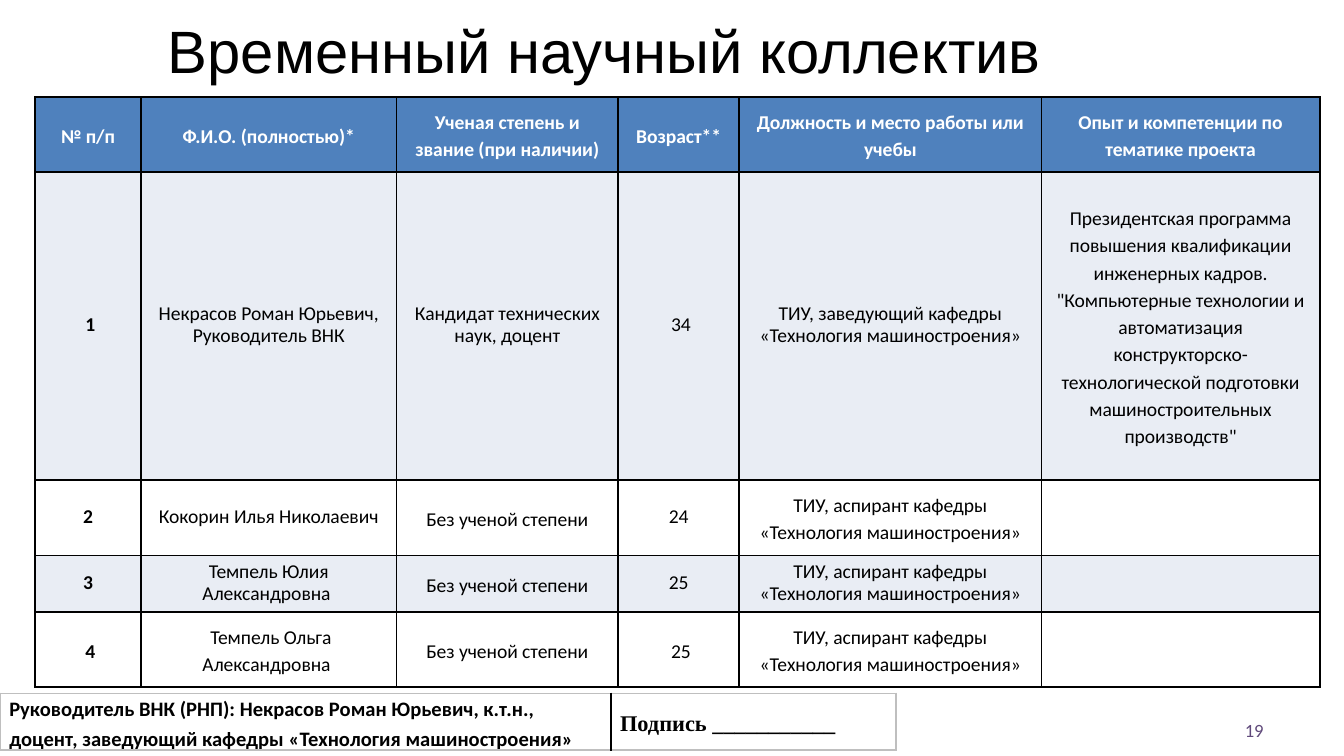
"""Builds a slide listing the members of a temporary research team."""
from copy import deepcopy

from lxml import etree
from pptx import Presentation, util as u
from pptx.dml import color
from pptx.enum import text
from pptx.oxml import ns

AL = text.PP_ALIGN
MID = text.MSO_ANCHOR.MIDDLE
TIGHT = u.Pt(11.8)
LOOSE = 1.15


def rgb(value):
    return color.RGBColor.from_string(value)


class Deck:
    def __init__(self, width, height):
        self.prs = Presentation()
        self.prs.slide_width, self.prs.slide_height = u.Pt(width), u.Pt(height)
        self.s = self.prs.slides.add_slide(self.prs.slide_layouts[6])
        self.base = dict(size=u.Pt(10.5), name="Calibri", bold=False)

    def put_text(self, tf, value, align=AL.CENTER, spacing=None, ink="000000", **fmt):
        p = tf.paragraphs[0]
        p.text = value
        p.alignment = align
        p.line_spacing = spacing
        for r in p.runs:
            for key, val in {**self.base, **fmt}.items():
                setattr(r.font, key, val)
            r.font.color.rgb = rgb(ink)
        for br in p._p.findall(ns.qn("a:br")):
            br.append(deepcopy(p.runs[0]._r.rPr))

    def label(self, box, value, **fmt):
        tf = self.s.shapes.add_textbox(*map(u.Pt, box)).text_frame
        tf.word_wrap = True
        tf.vertical_anchor = MID
        self.put_text(tf, value, **fmt)

    def border(self, cell, sides):
        pr = cell._tc.get_or_add_tcPr()
        for i, (side, ink) in enumerate(sides.items()):
            ln = etree.Element(ns.qn(f"a:ln{side}"), w=str(u.Pt(1)))
            fill = etree.SubElement(ln, ns.qn("a:solidFill"))
            etree.SubElement(fill, ns.qn("a:srgbClr"), val=ink)
            pr.insert(i, ln)

    def table(self, left, top, cols, rows):
        box = map(u.Pt, (left, top, sum(cols), sum(rows)))
        tbl = self.s.shapes.add_table(len(rows), len(cols), *box).table
        tbl.first_row = tbl.horz_banding = False
        for col, width in zip(tbl.columns, cols):
            col.width = u.Pt(width)
        for row, height in zip(tbl.rows, rows):
            row.height = u.Pt(height)
        return tbl

    def cell(self, cell, value, fill=None, sides=None, **fmt):
        cell.margin_left = cell.margin_right = u.Pt(5)
        cell.margin_top = cell.margin_bottom = 0
        cell.vertical_anchor = MID
        if fill:
            cell.fill.solid()
            cell.fill.fore_color.rgb = rgb(fill)
        else:
            cell.fill.background()
        self.border(cell, sides or dict.fromkeys("LRTB", "000000"))
        self.put_text(cell.text_frame, value, **fmt)


HEADER = ["№ п/п", "Ф.И.О. (полностью)*", "Ученая степень и звание (при наличии)",
          "Возраст**", "Должность и место работы или учебы",
          "Опыт и компетенции по тематике проекта"]
STUDENT = "ТИУ, аспирант кафедры «Технология машиностроения»"
NO_DEGREE = "Без ученой степени"
TEAM = [
    [" 1", "Некрасов Роман Юрьевич, Руководитель ВНК",
     "Кандидат технических наук, доцент", " 34",
     "ТИУ, заведующий кафедры «Технология машиностроения»",
     "Президентская программа повышения квалификации инженерных кадров.\n"
     "\"Компьютерные технологии и автоматизация конструкторско-технологической "
     "подготовки машиностроительных производств\""],
    ["2", "Кокорин Илья Николаевич", NO_DEGREE, "24", STUDENT, ""],
    ["3", "Темпель Юлия Александровна ", NO_DEGREE, "25", STUDENT, ""],
    [" 4", " Темпель Ольга Александровна ", NO_DEGREE, " 25", STUDENT, ""],
]
LOOSE_COLS = [{5}, {2, 4}, {2}, set(range(6))]


def main():
    d = Deck(720, 405)
    d.label((0, -7.2, 648, 67.7), "Временный научный коллектив",
            size=u.Pt(32), name="Arial")

    tbl = d.table(18.7, 52, [56.9, 136.8, 118.8, 64.8, 162, 149],
                  [40.3, 164.9, 40.5, 30.2, 40.3])
    for c, value in enumerate(HEADER):
        d.cell(tbl.cell(0, c), value, "4F81BD", spacing=LOOSE, ink="FFFFFF", bold=True)
    for r, (member, loose) in enumerate(zip(TEAM, LOOSE_COLS), 1):
        for c, value in enumerate(member):
            d.cell(tbl.cell(r, c), value, "E9EDF4" if r % 2 else "FFFFFF",
                   spacing=LOOSE if c in loose else TIGHT, bold=c == 0)

    sign = d.table(0, 371.5, [327.2, 152.8], [30])
    grey = dict.fromkeys("LRTB", "BFBFBF")
    d.cell(sign.cell(0, 0),
           "Руководитель ВНК (РНП): Некрасов Роман Юрьевич, к.т.н., доцент, "
           "заведующий кафедры «Технология машиностроения»",
           sides={**grey, "R": "000000"}, align=AL.LEFT, spacing=LOOSE,
           size=u.Pt(11), bold=True)
    d.cell(sign.cell(0, 1), "Подпись ___________", sides={**grey, "L": "000000"},
           align=AL.JUSTIFY, spacing=LOOSE, size=u.Pt(12),
           name="Times New Roman", bold=True)

    d.label((516, 380.2, 168, 21.6), "19", align=AL.RIGHT, ink="604A7B", size=u.Pt(10))
    d.prs.save("out.pptx")


if __name__ == "__main__":
    main()
